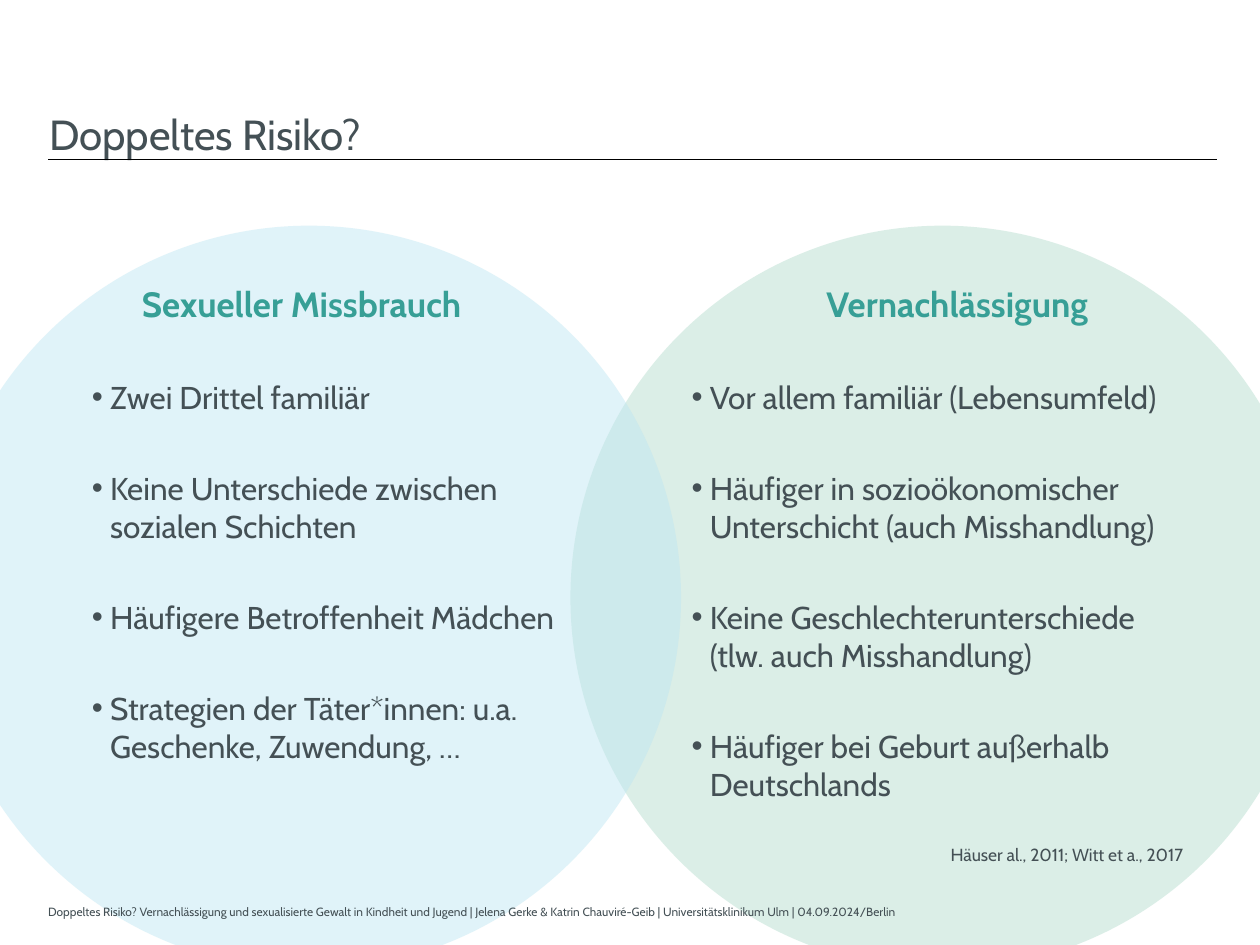
from lxml import etree
from pptx import Presentation, util as u
from pptx.dml.color import RGBColor
from pptx.enum import shapes, text
from pptx.oxml.ns import qn

FONT = "Cabin"
GREY, TEAL = "445055", "379F96"


def colour(value):
    return RGBColor.from_string(value)


def write(frame, paragraphs, margins, anchor=text.MSO_ANCHOR.TOP):
    """Fill a text frame with (wording, paragraph format, run format) entries."""
    frame.word_wrap = True
    frame.auto_size = text.MSO_AUTO_SIZE.NONE
    frame.vertical_anchor = anchor
    for side, size in zip(("left", "top", "right", "bottom"), margins):
        setattr(frame, "margin_" + side, u.Cm(size))
    for index, (wording, layout, font) in enumerate(paragraphs):
        paragraph = frame.paragraphs[0] if index == 0 else frame.add_paragraph()
        paragraph.text = wording
        layout = dict(layout)
        bullet = layout.pop("bullet", None)
        left, hanging = layout.pop("indent", (0, 0))
        properties = paragraph._p.get_or_add_pPr()
        properties.set("marL", str(u.Cm(left)))
        properties.set("indent", str(u.Cm(hanging)))
        if bullet:
            etree.SubElement(properties, qn("a:buFont")).set("typeface", "Arial")
            etree.SubElement(properties, qn("a:buChar")).set("char", bullet)
        else:
            etree.SubElement(properties, qn("a:buNone"))
        for name, value in {"space_before": u.Pt(0), **layout}.items():
            setattr(paragraph, name, value)
        for run in paragraph.runs:
            for name, value in {"name": FONT, "bold": False, **font}.items():
                if name == "color":
                    run.font.color.rgb = colour(value)
                else:
                    setattr(run.font, name, value)


presentation = Presentation()
presentation.slide_width, presentation.slide_height = u.Cm(25.4), u.Cm(19.05)
slide = presentation.slides.add_slide(presentation.slide_layouts[3])
tree = slide.shapes._spTree

# Overlapping circles, sent behind the text; the last one ends up at the back
for left, fill in ((-1.27, "BDE6F2"), (11.5, "B2DCCC")):
    circle = slide.shapes.add_shape(
        shapes.MSO_SHAPE.OVAL, u.Cm(left), u.Cm(4.55), u.Cm(15), u.Cm(15))
    circle.shadow.inherit = False
    circle.line.fill.background()
    circle.fill.solid()
    circle.fill.fore_color.rgb = colour(fill)
    colour_element = circle._element.spPr.find(".//" + qn("a:srgbClr"))
    etree.SubElement(colour_element, qn("a:alpha")).set("val", "46000")
    tree.remove(circle._element)
    tree.insert(2, circle._element)

# Rule under the title
rule = slide.shapes.add_connector(
    shapes.MSO_CONNECTOR.STRAIGHT, u.Cm(0.97), u.Cm(3.22), u.Cm(24.54), u.Cm(3.22))
rule.line.color.rgb = colour("000000")
rule.line.width = u.Pt(0.5)
etree.SubElement(rule._element.spPr, qn("a:effectLst"))

# Title
body_margins = (0, 0.15, 0, 0.1)
title = slide.shapes.title
title.left, title.top, title.width, title.height = map(u.Cm, (0.99, 2.03, 18, 1.22))
write(title.text_frame,
      [("Doppeltes Risiko?", {"alignment": text.PP_ALIGN.LEFT},
        {"size": u.Pt(24), "color": GREY})],
      body_margins)

# Two lists, each under its heading
columns = [
    (1, (1.85, 5.54, 9.65, 11.76), "Sexueller Missbrauch",
     {"alignment": text.PP_ALIGN.LEFT, "indent": (1.01, 0)},
     ["Zwei Drittel familiär",
      "Keine Unterschiede zwischen sozialen Schichten",
      "Häufigere Betroffenheit Mädchen",
      "Strategien der Täter*innen: u.a. Geschenke, Zuwendung, …"]),
    (2, (13.94, 5.54, 10.72, 11.66), "Vernachlässigung",
     {"alignment": text.PP_ALIGN.CENTER},
     ["Vor allem familiär (Lebensumfeld)",
      "Häufiger in sozioökonomischer Unterschicht (auch Misshandlung)",
      "Keine Geschlechterunterschiede\n(tlw. auch Misshandlung)",
      "Häufiger bei Geburt außerhalb Deutschlands"]),
]
bullet_layout = {"bullet": "•", "indent": (0.37, -0.37), "space_before": u.Pt(30.5)}
for number, box, heading, heading_layout, items in columns:
    body = slide.placeholders[number]
    body.left, body.top, body.width, body.height = map(u.Cm, box)
    paragraphs = [(heading, heading_layout,
                   {"size": u.Pt(20), "color": TEAL, "bold": True})]
    paragraphs += [(item, bullet_layout, {"size": u.Pt(18), "color": GREY})
                   for item in items]
    write(body.text_frame, paragraphs, body_margins)

# Footer and sources
notes = [
    ((0.97, 18.06, 17.63, 0.64), 6.8, text.PP_ALIGN.LEFT, (0, 0.13, 0.25, 0.13),
     text.MSO_ANCHOR.MIDDLE,
     "Doppeltes Risiko? Vernachlässigung und sexualisierte Gewalt in Kindheit und "
     "Jugend | Jelena Gerke & Katrin Chauviré-Geib | Universitätsklinikum Ulm | "
     "04.09.2024/Berlin"),
    ((18.03, 16.89, 6.07, 0.69), 10, text.PP_ALIGN.RIGHT, (0.25, 0.13, 0.25, 0.13),
     text.MSO_ANCHOR.TOP, "Häuser al., 2011; Witt et a., 2017"),
]
for box, size, alignment, margins, anchor, wording in notes:
    note = slide.shapes.add_textbox(*map(u.Cm, box))
    write(note.text_frame,
          [(wording, {"alignment": alignment}, {"size": u.Pt(size), "color": GREY})],
          margins, anchor)

presentation.save("out.pptx")
